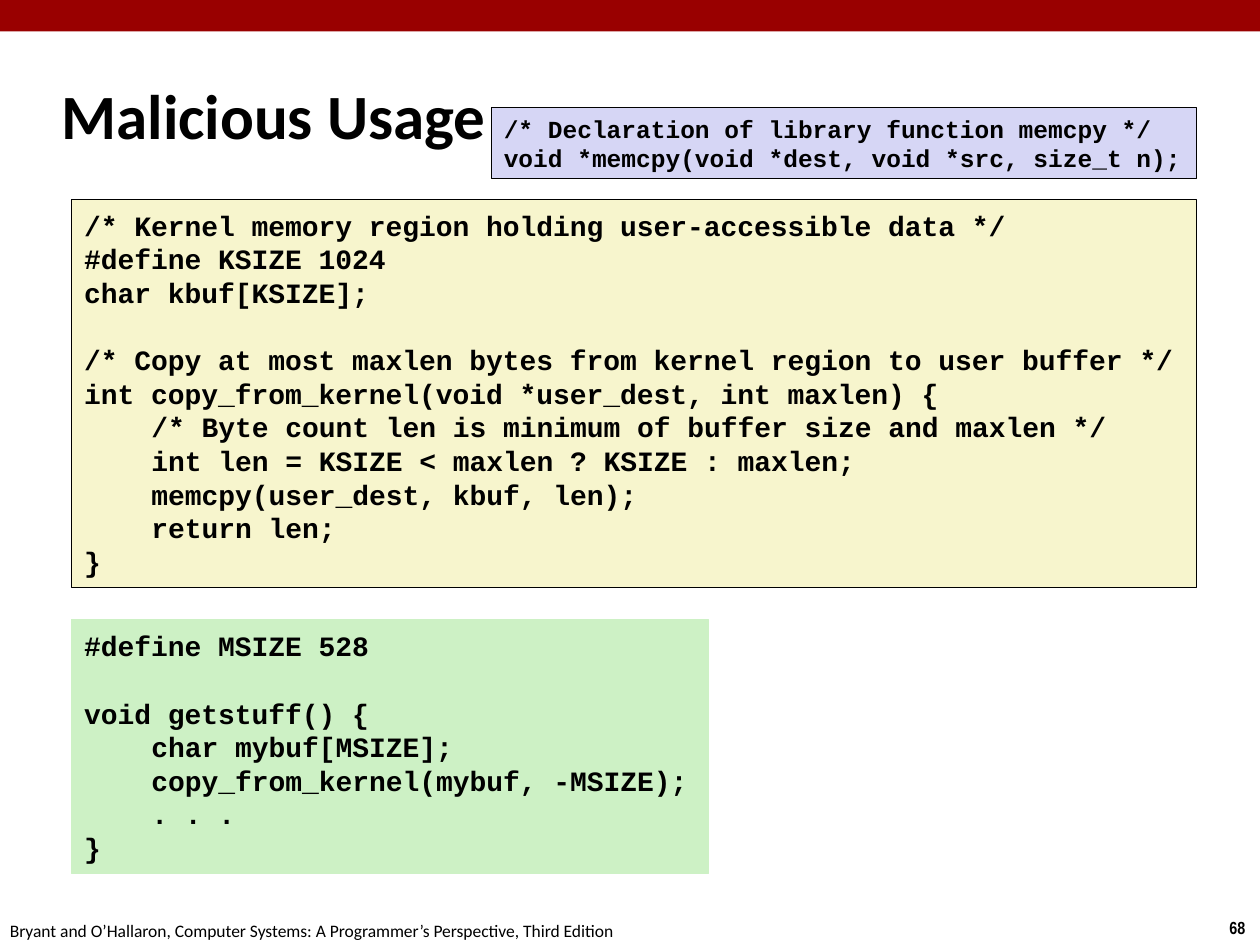
"""Build the "Malicious Usage" slide with its three code panels."""
from dataclasses import dataclass

from pptx import Presentation
from pptx.dml.color import RGBColor
from pptx.enum.shapes import MSO_SHAPE
from pptx.enum.text import MSO_ANCHOR, PP_ALIGN
from pptx.util import Inches, Pt

RECTANGLE = MSO_SHAPE.RECTANGLE
TOP, MIDDLE = MSO_ANCHOR.TOP, MSO_ANCHOR.MIDDLE
LEFT = PP_ALIGN.LEFT


@dataclass(frozen=True)
class Theme:
    ink: str = "000000"
    banner: str = "990000"
    declaration: str = "D6D6F5"
    kernel: str = "F7F5CD"
    attack: str = "CDF1C5"
    heading: str = "Calibri"
    number: str = "Arial Narrow"
    code: str = "Courier New"
    title_size: float = 36
    code_size: float = 16
    declaration_size: float = 14
    footer_size: float = 10
    leading: float = 1.2
    indent_characters: float = 4
    character_width: float = 0.6


THEME = Theme()


def add_rectangle(box, fill, line=None):
    shape = slide.shapes.add_shape(RECTANGLE, *map(Inches, box))
    shape.shadow.inherit = False
    shape.fill.solid()
    shape.fill.fore_color.rgb = RGBColor.from_string(fill)
    if line:
        shape.line.color.rgb = RGBColor.from_string(line)
        shape.line.width = Pt(0.5)
    else:
        shape.line.fill.background()
    return shape


def write_text(shape, text, *, font, size, bold=False, anchor=TOP, wrap=True, leading=None):
    frame = shape.text_frame
    frame.word_wrap = wrap
    frame.vertical_anchor = anchor
    paragraph, gap = frame.paragraphs[0], 0
    for number, line in enumerate(text.split("\n")):
        if not line:
            gap = size * leading
            continue
        if number:
            paragraph = frame.add_paragraph()
        paragraph.alignment = LEFT
        if leading:
            paragraph.line_spacing = Pt(size * leading)
        if gap:
            paragraph.space_before, gap = Pt(gap), 0
        if line.startswith("\t"):
            indent = size * THEME.character_width * THEME.indent_characters
            paragraph._p.get_or_add_pPr().set("marL", str(int(Pt(indent))))
        run = paragraph.add_run()
        run.text = line.lstrip("\t")
        run.font.name = font
        run.font.size = Pt(size)
        run.font.bold = bold
        run.font.color.rgb = RGBColor.from_string(THEME.ink)


KERNEL_CODE = """/* Kernel memory region holding user-accessible data */
#define KSIZE 1024
char kbuf[KSIZE];

/* Copy at most maxlen bytes from kernel region to user buffer */
int copy_from_kernel(void *user_dest, int maxlen) {
\t/* Byte count len is minimum of buffer size and maxlen */
\tint len = KSIZE < maxlen ? KSIZE : maxlen;
\tmemcpy(user_dest, kbuf, len);
\treturn len;
}"""

ATTACK_CODE = """#define MSIZE 528

void getstuff() {
\tchar mybuf[MSIZE];
\tcopy_from_kernel(mybuf, -MSIZE);
\t. . .
}"""

DECLARATION_CODE = """/* Declaration of library function memcpy */
void *memcpy(void *dest, void *src, size_t n);"""

FOOTER = "Bryant and O’Hallaron, Computer Systems: A Programmer’s Perspective, Third Edition"

presentation = Presentation()
presentation.slide_width = Inches(10)
presentation.slide_height = Inches(7.5)
slide = presentation.slides.add_slide(presentation.slide_layouts[6])

add_rectangle((0, 0, 10, 0.25), THEME.banner)

labels = [
    ((9.66, 7.23, 0.34, 0.27), "68",
     dict(font=THEME.number, size=THEME.footer_size, bold=True, wrap=False)),
    ((-0.02, 7.25, 5.08, 0.27), FOOTER,
     dict(font=THEME.heading, size=THEME.footer_size, wrap=False)),
    ((0.39, 0.49, 8.3, 0.83), "Malicious Usage",
     dict(font=THEME.heading, size=THEME.title_size, bold=True, anchor=MIDDLE)),
]
for box, text, style in labels:
    write_text(slide.shapes.add_textbox(*map(Inches, box)), text, **style)

panels = [
    ((0.57, 1.58, 8.93, 3.08), KERNEL_CODE, THEME.kernel, THEME.ink, THEME.code_size),
    ((0.57, 4.92, 5.05, 2.01), ATTACK_CODE, THEME.attack, THEME.attack, THEME.code_size),
    ((3.9, 0.85, 5.6, 0.57), DECLARATION_CODE, THEME.declaration, THEME.ink, THEME.declaration_size),
]
for box, code, fill, line, size in panels:
    write_text(add_rectangle(box, fill, line), code, font=THEME.code, size=size,
               bold=True, anchor=MIDDLE, leading=THEME.leading)

presentation.save("out.pptx")
